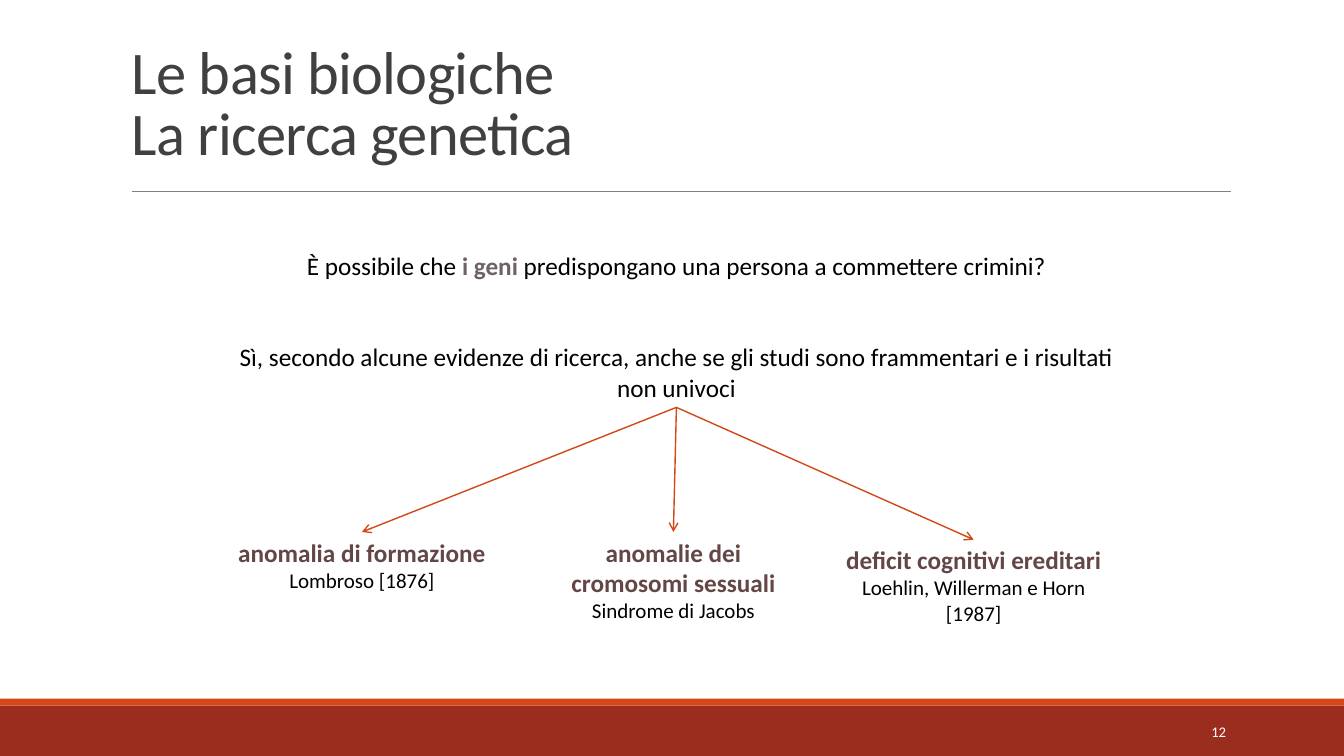
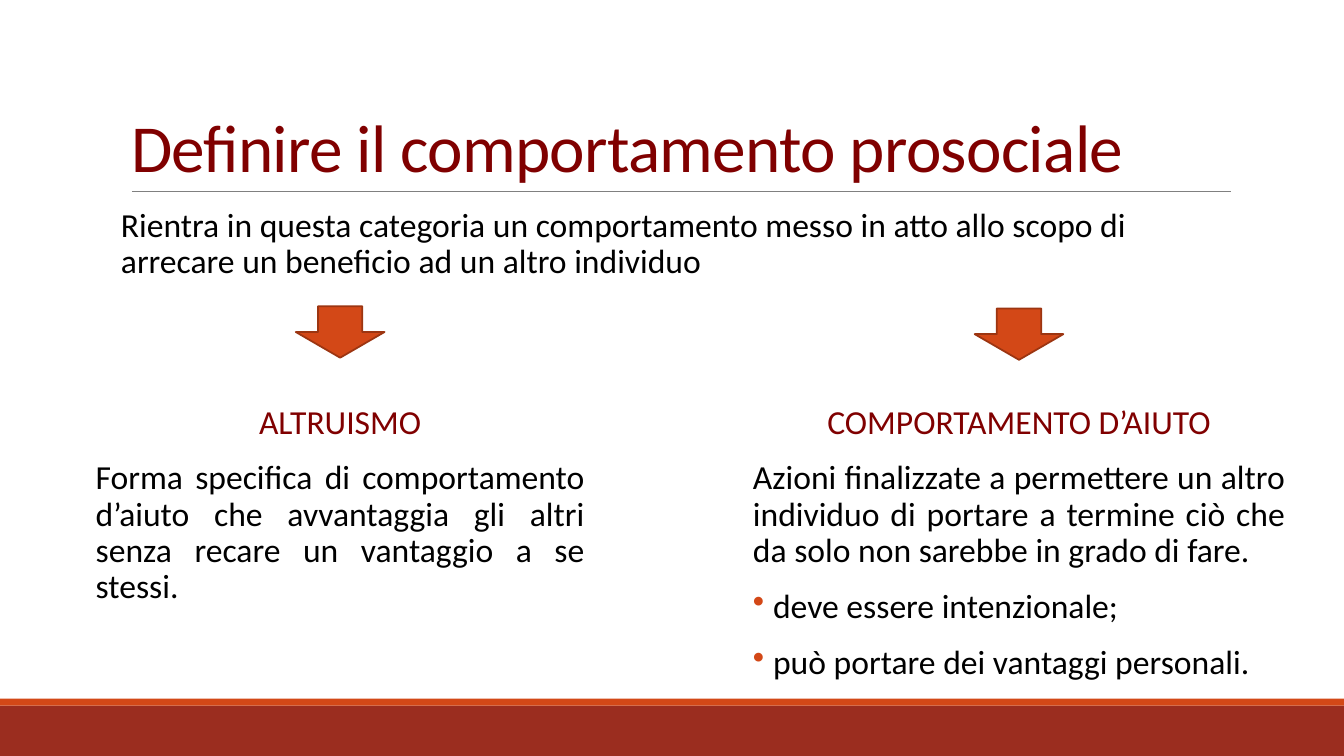
from lxml import etree
from pptx import Presentation
from pptx import util as u
from pptx.dml.color import RGBColor
from pptx.enum import shapes, text
from pptx.oxml.ns import qn

COLS, ROWS = 96, 54
WIDTH, HEIGHT = u.Inches(13.33), u.Inches(7.5)
FONT = "Calibri"
BLACK, WHITE, GREY = "000000", "FFFFFF", "808080"
BRICK, ORANGE, RUST = "9B2D1F", "D34817", "9C3511"
TITLE_GREY, MAROON, GENE, LABEL = "404040", "800000", "6E6263", "644646"
CENTER, RIGHT, JUSTIFY = (text.PP_ALIGN.CENTER, text.PP_ALIGN.RIGHT,
                          text.PP_ALIGN.JUSTIFY)
BODY = {"line_spacing": 0.9, "space_before": u.Pt(12), "space_after": u.Pt(2)}
CENTERED = {"alignment": CENTER}


def rgb(value):
    return RGBColor.from_string(value)


def cols(n):
    return round(WIDTH * n / COLS)


def rows(n):
    return round(HEIGHT * n / ROWS)


def place(box):
    """Turn grid columns and rows into slide lengths."""
    x, y, w, h = box
    return cols(x), rows(y), cols(w), rows(h)


def apply(target, values):
    for name, value in values.items():
        setattr(target, name, value)


def style_run(r, size, color=BLACK, bold=False):
    apply(r.font, {"name": FONT, "size": u.Pt(size), "bold": bold})
    r.font.color.rgb = rgb(color)


def set_bullet(p, color):
    pPr = p._p.get_or_add_pPr()
    pPr.set("marL", str(u.Inches(0.2)))
    pPr.set("indent", str(-u.Inches(0.2)))
    clr = etree.SubElement(pPr, qn("a:buClr"))
    etree.SubElement(clr, qn("a:srgbClr"), val=color)
    etree.SubElement(pPr, qn("a:buChar"), char="•")


def add_text(slide, box, paragraphs, **frame):
    """Each paragraph is (format values, runs); a run is (text, size, ...)."""
    sp = slide.shapes.add_textbox(*place(box))
    tf = sp.text_frame
    apply(tf, {"word_wrap": True, **frame})
    for i, (values, runs) in enumerate(paragraphs):
        p = tf.add_paragraph() if i else tf.paragraphs[0]
        apply(p, values)
        for words, *style in runs:
            r = p.add_run()
            r.text = words
            style_run(r, *style)
    return sp


def add_block(slide, kind, box, fill, line=None):
    sp = slide.shapes.add_shape(kind, *place(box))
    sp.shadow.inherit = False
    sp.fill.solid()
    sp.fill.fore_color.rgb = rgb(fill)
    if line:
        sp.line.color.rgb = rgb(line)
        sp.line.width = u.Pt(1.25)
    else:
        sp.line.fill.background()


def add_line(slide, color, width, ends=(0, 0, 0, 0), arrow=False):
    c = slide.shapes.add_connector(shapes.MSO_CONNECTOR.STRAIGHT, *place(ends))
    c.line.color.rgb = rgb(color)
    c.line.width = u.Pt(width)
    spPr = c.element.find(qn("p:spPr"))
    if arrow:
        etree.SubElement(spPr.find(qn("a:ln")), qn("a:tailEnd"), type="arrow")
    etree.SubElement(spPr, qn("a:effectLst"))
    return c


def add_base(prs, title, box, size, color):
    """Add a slide with the shared bands, rule and title style."""
    slide = prs.slides.add_slide(prs.slide_layouts[5])
    rect = shapes.MSO_SHAPE.RECTANGLE
    add_block(slide, rect, (0, 50.4, COLS, 3.6), BRICK)
    add_block(slide, rect, (0, 49.9, COLS, 0.5), ORANGE)
    add_line(slide, GREY, 0.5, (9.43, 13.68, 87.93, 13.68))
    sp = slide.shapes.title
    apply(sp, dict(zip(("left", "top", "width", "height"), place(box))))
    tf = sp.text_frame
    tf.text = title
    apply(tf, {"word_wrap": True, "auto_size": text.MSO_AUTO_SIZE.NONE,
               "vertical_anchor": text.MSO_ANCHOR.BOTTOM})
    p = tf.paragraphs[0]
    apply(p, {"alignment": text.PP_ALIGN.LEFT, "line_spacing": 0.85})
    for r in p.runs:
        style_run(r, size, color)
        r.font._element.set("spc", "-50")
    return slide


def add_label(slide, box, heading, detail):
    lines = [(CENTERED, [(line, 18, LABEL, True)]) for line in heading]
    return add_text(slide, box, lines + [(CENTERED, [(detail, 15)])])


def add_column(slide, box, arrow_rise, heading, definition, points=()):
    """Fill the box with a definition, under an arrow centred above it."""
    x, y, w, _ = box
    arrow_w, arrow_h = 6.34, 3.67
    add_block(slide, shapes.MSO_SHAPE.DOWN_ARROW,
              (x + (w - arrow_w) / 2, y - arrow_rise, arrow_w, arrow_h),
              ORANGE, RUST)
    justified = {**BODY, "alignment": JUSTIFY}
    paragraphs = [({**BODY, **CENTERED}, [(heading, 24, MAROON)])]
    paragraphs += [(justified, [(words, 24)]) for words in (definition, *points)]
    sp = add_text(slide, box, paragraphs, margin_left=0, margin_right=0)
    for p in sp.text_frame.paragraphs[2:]:
        set_bullet(p, ORANGE)


def genetics_slide(prs):
    slide = add_base(prs, "Le basi biologiche\vLa ricerca genetica",
                     (8.7, 2.23, 79.2, 10.15), 43.2, TITLE_GREY)
    add_text(slide, (77.98, 50.83, 10.3, 2.88),
             [({"alignment": RIGHT}, [("12", 10.5, WHITE)])],
             vertical_anchor=text.MSO_ANCHOR.MIDDLE)
    question = add_text(slide, (15.7, 17.5, 65.23, 11.6), [
        (CENTERED, [("È possibile che ", 18), ("i geni ", 18, GENE, True),
                    ("predispongano una persona a commettere crimini?", 18)]),
        ({**CENTERED, "space_before": u.Pt(44)},
         [("Sì, secondo alcune evidenze di ricerca, anche se gli studi sono "
           "frammentari e i risultati non univoci", 18)]),
    ])
    labels = [
        ((16.1, 38, 19.5, 4.75), ["anomalia di formazione"], "Lombroso [1876]"),
        ((39.8, 38, 16.6, 6.9), ["anomalie dei", "cromosomi sessuali"],
         "Sindrome di Jacobs"),
        ((59.35, 38.55, 20.4, 6.55), ["deficit cognitivi ereditari"],
         "Loehlin, Willerman e Horn [1987]"),
    ]
    for label in labels:
        sp = add_label(slide, *label)
        c = add_line(slide, ORANGE, 1, arrow=True)
        c.begin_connect(question, 2)
        c.end_connect(sp, 0)


def prosocial_slide(prs):
    slide = add_base(prs, "Definire il comportamento prosociale",
                     (8.64, 2.23, 79.2, 11.45), 48, MAROON)
    add_text(slide, (8.64, 14.54, 79.2, 6.5),
             [(BODY, [("Rientra in questa categoria un comportamento messo in "
                       "atto allo scopo di arrecare un beneficio ad un altro "
                       "individuo", 24)])],
             margin_left=0, margin_right=0)
    add_column(slide, (6.84, 28.58, 34.92, 16.2), 6.7, "ALTRUISMO",
               "Forma specifica di comportamento d’aiuto che avvantaggia gli "
               "altri senza recare un vantaggio a se stessi.")
    add_column(slide, (53.78, 28.58, 38.02, 20.95), 6.55,
               "COMPORTAMENTO D’AIUTO",
               "Azioni finalizzate a permettere un altro individuo di portare "
               "a termine ciò che da solo non sarebbe in grado di fare.",
               ["deve essere intenzionale;",
                "può portare dei vantaggi personali."])


def main():
    prs = Presentation()
    apply(prs, {"slide_width": WIDTH, "slide_height": HEIGHT})
    genetics_slide(prs)
    prosocial_slide(prs)
    prs.save("out.pptx")


if __name__ == "__main__":
    main()
